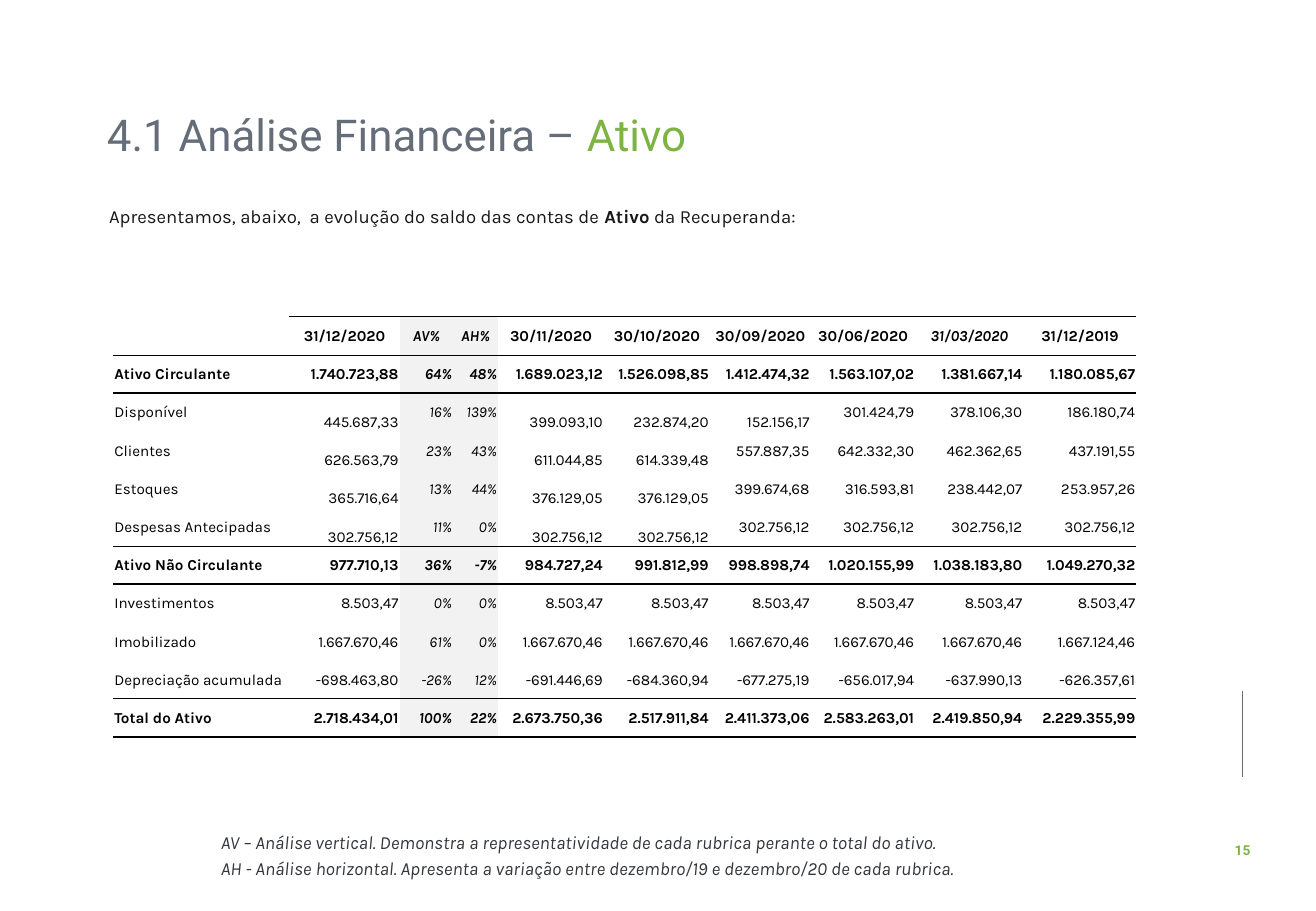
from pptx import Presentation
from pptx.dml.color import RGBColor
from pptx.enum.shapes import MSO_CONNECTOR as Connector
from pptx.enum.text import MSO_ANCHOR as Anchor, MSO_AUTO_SIZE as AutoSize, PP_ALIGN as Align
from pptx.oxml.ns import qn
from pptx.util import Pt
from lxml.etree import SubElement

GREEN, GRAY, BLACK, SHADE = "7CB342", "656D78", "000000", "F2F2F2"

COLUMN_WIDTHS = [104.5, 65.4, 31.6, 26.7, 62.8, 62.8, 59.8, 62, 64.1, 67]
ROW_HEIGHT = 22.65
PERCENT_COLUMNS = {2, 3}
ITALIC_HEADERS = {2, 3, 8}
TOTAL_ROWS = {1, 6, 10}
LOW_CELLS = {(row, column) for row in range(2, 6) for column in (1, 4, 5)} | {(2, 6)}
RULES = {0: 0.5, 1: 0.5, 2: 1, 6: 0.5, 7: 1, 10: 0.5, 11: 1}

ASSETS = [
    ["", "31/12/2020", "AV%", "AH%", "30/11/2020", "30/10/2020", "30/09/2020",
     "30/06/2020", "31/03/2020", "31/12/2019"],
    ["Ativo Circulante", "1.740.723,88", "64%", "48%", "1.689.023,12", "1.526.098,85",
     "1.412.474,32", "1.563.107,02", "1.381.667,14", "1.180.085,67"],
    ["Disponível", "445.687,33", "16%", "139%", "399.093,10", "232.874,20",
     "152.156,17", "301.424,79", "378.106,30", "186.180,74"],
    ["Clientes", "626.563,79", "23%", "43%", "611.044,85", "614.339,48",
     "557.887,35", "642.332,30", "462.362,65", "437.191,55"],
    ["Estoques", "365.716,64", "13%", "44%", "376.129,05", "376.129,05",
     "399.674,68", "316.593,81", "238.442,07", "253.957,26"],
    ["Despesas Antecipadas", "302.756,12", "11%", "0%", "302.756,12", "302.756,12",
     "302.756,12", "302.756,12", "302.756,12", "302.756,12"],
    ["Ativo Não Circulante", "977.710,13", "36%", "-7%", "984.727,24", "991.812,99",
     "998.898,74", "1.020.155,99", "1.038.183,80", "1.049.270,32"],
    ["Investimentos", "8.503,47", "0%", "0%", "8.503,47", "8.503,47",
     "8.503,47", "8.503,47", "8.503,47", "8.503,47"],
    ["Imobilizado", "1.667.670,46", "61%", "0%", "1.667.670,46", "1.667.670,46",
     "1.667.670,46", "1.667.670,46", "1.667.670,46", "1.667.124,46"],
    ["Depreciação acumulada", "-698.463,80", "-26%", "12%", "-691.446,69", "-684.360,94",
     "-677.275,19", "-656.017,94", "-637.990,13", "-626.357,61"],
    ["Total do Ativo", "2.718.434,01", "100%", "22%", "2.673.750,36", "2.517.911,84",
     "2.411.373,06", "2.583.263,01", "2.419.850,94", "2.229.355,99"],
]


def set_color(color_format, hex_color):
    color_format.rgb = RGBColor.from_string(hex_color)


def set_values(target, values):
    for name, value in values.items():
        setattr(target, name, value)


class SlideBuilder:
    heading_font = "Roboto"
    body_font = "Karla"

    def __init__(self, slide):
        self.slide = slide

    def runs(self, paragraph, parts, name, size, color, **shared):
        for text, changes in parts:
            run = paragraph.add_run()
            run.text = text
            values = {"name": name, "size": Pt(size), "bold": False, "italic": False}
            values |= shared | changes
            hex_color = values.pop("color", color)
            set_values(run.font, values)
            set_color(run.font.color, hex_color)

    def title(self, box, parts):
        shape = self.slide.shapes.title
        set_values(shape, dict(zip(("left", "top", "width", "height"), map(Pt, box))))
        set_values(shape.text_frame, {
            "word_wrap": True, "auto_size": AutoSize.NONE, "vertical_anchor": Anchor.MIDDLE})
        paragraph = shape.text_frame.paragraphs[0]
        set_values(paragraph, {"alignment": Align.LEFT, "line_spacing": 0.9, "space_before": Pt(0)})
        self.runs(paragraph, parts, self.heading_font, 26, GRAY)

    def text(self, box, lines, name, size, color, alignment, spacing=1.0,
             indent=0, wrap=True, **shared):
        frame = self.slide.shapes.add_textbox(*map(Pt, box)).text_frame
        set_values(frame, {"word_wrap": wrap, "auto_size": AutoSize.SHAPE_TO_FIT_TEXT})
        for index, parts in enumerate(lines):
            paragraph = frame.add_paragraph() if index else frame.paragraphs[0]
            set_values(paragraph, {"alignment": alignment, "line_spacing": spacing})
            paragraph._p.get_or_add_pPr().set("indent", str(Pt(indent)))
            self.runs(paragraph, parts, name, size, color, **shared)

    def line(self, start, end, color, width):
        connector = self.slide.shapes.add_connector(Connector.STRAIGHT, *map(Pt, start + end))
        set_color(connector.line.color, color)
        connector.line.width = Pt(width)
        SubElement(connector._element.spPr, qn("a:effectLst"))

    def border(self, cell, side, width):
        line = SubElement(cell._tc.get_or_add_tcPr(), qn(f"a:ln{side}"))
        line.set("w", str(Pt(width)))
        if width:
            fill = SubElement(line, qn("a:solidFill"))
            SubElement(fill, qn("a:srgbClr")).set("val", BLACK)
        else:
            SubElement(line, qn("a:noFill"))

    def cell(self, cell, row, column, text):
        set_values(cell, {
            "margin_left": Pt(0.75), "margin_right": Pt(0.75),
            "margin_top": Pt(0.75), "margin_bottom": Pt(0),
            "vertical_anchor": Anchor.BOTTOM if (row, column) in LOW_CELLS else Anchor.MIDDLE})
        top = 0 if (row, column) == (0, 0) else RULES.get(row, 0)
        for side, width in {"L": 0, "R": 0, "T": top, "B": RULES.get(row + 1, 0)}.items():
            self.border(cell, side, width)
        if column in PERCENT_COLUMNS:
            cell.fill.solid()
            set_color(cell.fill.fore_color, SHADE)
        else:
            cell.fill.background()
        paragraph = cell.text_frame.paragraphs[0]
        body_alignment = Align.RIGHT if column else Align.LEFT
        paragraph.alignment = body_alignment if row else Align.CENTER
        self.runs(paragraph, [(text, {})], self.body_font, 9, BLACK,
                  bold=row == 0 or row in TOTAL_ROWS,
                  italic=column in (PERCENT_COLUMNS if row else ITALIC_HEADERS))

    def table(self, left, top, rows, widths, row_height):
        table = self.slide.shapes.add_table(
            len(rows), len(widths), Pt(left), Pt(top),
            Pt(sum(widths)), Pt(row_height * len(rows))).table
        set_values(table, {"first_row": False, "horz_banding": False})
        for column, width in zip(table.columns, widths):
            column.width = Pt(width)
        for row, texts in enumerate(rows):
            table.rows[row].height = Pt(row_height)
            for column, text in enumerate(texts):
                self.cell(table.cell(row, column), row, column, text)


def main():
    presentation = Presentation()
    set_values(presentation, {"slide_width": Pt(780), "slide_height": Pt(540)})
    builder = SlideBuilder(presentation.slides.add_slide(presentation.slide_layouts[5]))

    builder.line((736.5, 409.5), (736.5, 460.8), GRAY, 0.5)
    builder.text((724.3, 495.4, 24.5, 17.3), [[("15", {})]], builder.heading_font, 8.1, GREEN,
                 Align.CENTER, wrap=False, bold=True)
    builder.title((56.2, 62, 589, 38.2),
                  [("4.1 Análise Financeira – ", {}), ("Ativo", {"color": GREEN})])
    builder.text((57.6, 111.6, 626.4, 25.2), [[
        ("Apresentamos, abaixo,  a evolução do saldo das contas de ", {}),
        ("Ativo", {"bold": True}),
        (" da Recuperanda:", {}),
    ]], builder.body_font, 11, "181717", Align.JUSTIFY, spacing=1.5)
    notes = [
        "AV – Análise vertical. Demonstra a representatividade de cada rubrica perante o total do ativo.",
        "AH - Análise horizontal. Apresenta a variação entre dezembro/19 e dezembro/20 de cada rubrica.",
    ]
    builder.text((101.5, 487.4, 626.4, 37.4), [[(note, {})] for note in notes],
                 builder.body_font, 11, "33363C", Align.JUSTIFY, spacing=1.14,
                 indent=22.3, italic=True)
    builder.table(67, 187.7, ASSETS, COLUMN_WIDTHS, ROW_HEIGHT)
    presentation.save("out.pptx")


if __name__ == "__main__":
    main()
